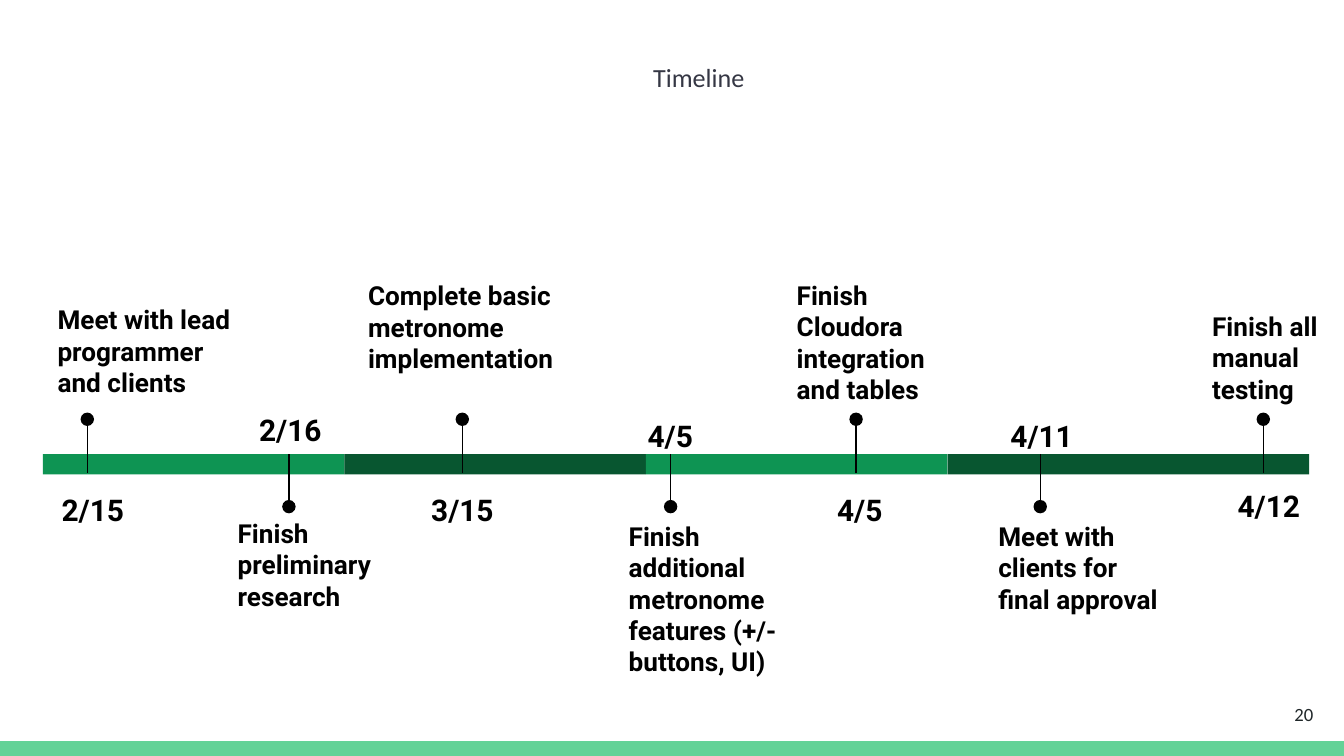
from dataclasses import dataclass
from lxml.etree import SubElement
from pptx import Presentation
from pptx.dml.color import RGBColor
from pptx.enum.shapes import MSO_CONNECTOR, MSO_SHAPE
from pptx.enum.text import MSO_ANCHOR, PP_ALIGN
from pptx.oxml.ns import qn
from pptx.util import Inches, Pt


@dataclass(frozen=True)
class Theme:
    black: str = "000000"
    light: str = "0E9453"
    dark: str = "085630"
    band: str = "63D297"
    title: str = "353744"
    page: str = "202729"
    head: str = "Calibri"
    body: str = "Roboto"
    note: int = 14
    date: int = 16
    small: int = 10


@dataclass(frozen=True)
class Box:
    left: float
    top: float
    width: float
    height: float

    def lengths(self) -> tuple:
        return tuple(map(Inches, (self.left, self.top, self.width, self.height)))


@dataclass(frozen=True)
class Stop:
    mid: float
    above: bool
    note: str
    area: Box
    date: str
    left: float
    top: float


THEME = Theme()
WIDE = 10
HIGH = WIDE * 9 / 16
BAND = 0.11
BARS = 4
BAR_TOP, BAR_HIGH = 3.38, 0.15
BAR_LEFT, BAR_LAST, BAR_END = 0.32, 7.05, 9.74
BAR_STEP = (BAR_LAST - BAR_LEFT) / (BARS - 1)
DOT = 0.1
DOT_HIGH, DOT_LOW = 3.12, 3.77
LINE_END = 3.52

STOPS = [
    Stop(0.65, True, "Meet with lead programmer and clients",
         Box(0.33, 2.16, 1.5, 0.91), "2/15", 0.36, 3.52),
    Stop(2.15, False, "Finish preliminary research",
         Box(1.67, 3.75, 1.5, 0.91), "2/16", 1.83, 2.92),
    Stop(3.44, True, "Complete basic metronome implementation",
         Box(2.64, 1.98, 1.89, 0.91), "3/15", 3.11, 3.52),
    Stop(4.99, False, "Finish additional metronome features (+/- buttons, UI)",
         Box(4.58, 3.77, 1.5, 1.38), "4/5", 4.72, 2.97),
    Stop(6.37, True, "Finish Cloudora integration and tables",
         Box(5.83, 1.98, 1.5, 1.14), "4/5", 6.13, 3.52),
    Stop(7.74, False, "Meet with clients for final approval",
         Box(7.33, 3.77, 1.5, 0.91), "4/11", 7.42, 2.97),
    Stop(9.4, True, "Finish all manual testing",
         Box(8.92, 2.21, 1.08, 0.91), "4/12", 9.11, 3.49),
]


def add_run(para, text: str, size: int, font: str, color: str, bold: bool = False) -> None:
    run = para.add_run()
    run.text = text
    run.font.size = Pt(size)
    run.font.name = font
    run.font.bold = bold
    run.font.color.rgb = RGBColor.from_string(color)


def add_solid(slide, kind: MSO_SHAPE, box: Box, color: str) -> None:
    shape = slide.shapes.add_shape(kind, *box.lengths())
    shape.shadow.inherit = False
    shape.fill.solid()
    shape.fill.fore_color.rgb = RGBColor.from_string(color)
    shape.line.fill.background()


def add_box(slide, box: Box):
    frame = slide.shapes.add_textbox(*box.lengths()).text_frame
    frame.word_wrap = True
    frame.margin_left = frame.margin_right = Inches(0.1)
    frame.margin_top = frame.margin_bottom = Inches(0.1)
    return frame


def add_pin(slide, stop: Stop) -> None:
    start, end = (DOT_HIGH, LINE_END) if stop.above else (DOT_LOW, BAR_TOP)
    line = slide.shapes.add_connector(
        MSO_CONNECTOR.STRAIGHT, Inches(stop.mid), Inches(start), Inches(stop.mid), Inches(end))
    line.line.color.rgb = RGBColor.from_string(THEME.black)
    line.line.width = Pt(0.75)
    SubElement(line._element.spPr, qn("a:effectLst"))
    dot = Box(stop.mid - DOT / 2, start - DOT / 2, DOT, DOT)
    add_solid(slide, MSO_SHAPE.OVAL, dot, THEME.black)


def add_stop(slide, stop: Stop) -> None:
    add_pin(slide, stop)
    note = add_box(slide, stop.area).paragraphs[0]
    add_run(note, stop.note, THEME.note, THEME.body, THEME.black, True)
    date = add_box(slide, Box(stop.left, stop.top, 0.95, 0.41)).paragraphs[0]
    date.line_spacing = 1.15
    date.space_after = Pt(16)
    add_run(date, stop.date, THEME.date, THEME.body, THEME.black, True)


def add_title(slide) -> None:
    title = slide.shapes.title
    title.left, title.top, title.width, title.height = Box(3.17, 0.41, 4.06, 0.72).lengths()
    title.text_frame.vertical_anchor = MSO_ANCHOR.TOP
    para = title.text_frame.paragraphs[0]
    para.alignment = PP_ALIGN.CENTER
    add_run(para, "Timeline", THEME.note, THEME.head, THEME.title)


def add_page(slide) -> None:
    frame = add_box(slide, Box(9.27, 5.1, 0.6, 0.43))
    frame.vertical_anchor = MSO_ANCHOR.MIDDLE
    para = frame.paragraphs[0]
    para.alignment = PP_ALIGN.RIGHT
    add_run(para, "20", THEME.small, THEME.head, THEME.page)


def main() -> None:
    deck = Presentation()
    deck.slide_width, deck.slide_height = Inches(WIDE), Inches(HIGH)
    slide = deck.slides.add_slide(deck.slide_layouts[5])
    add_title(slide)
    add_solid(slide, MSO_SHAPE.RECTANGLE, Box(0, HIGH - BAND, WIDE, BAND), THEME.band)
    for i in range(BARS):
        left = BAR_LEFT + i * BAR_STEP
        width = BAR_END - left if i == BARS - 1 else BAR_STEP
        color = THEME.dark if i % 2 else THEME.light
        add_solid(slide, MSO_SHAPE.RECTANGLE, Box(left, BAR_TOP, width, BAR_HIGH), color)
    for stop in STOPS:
        add_stop(slide, stop)
    add_page(slide)
    deck.save("out.pptx")


if __name__ == "__main__":
    main()
